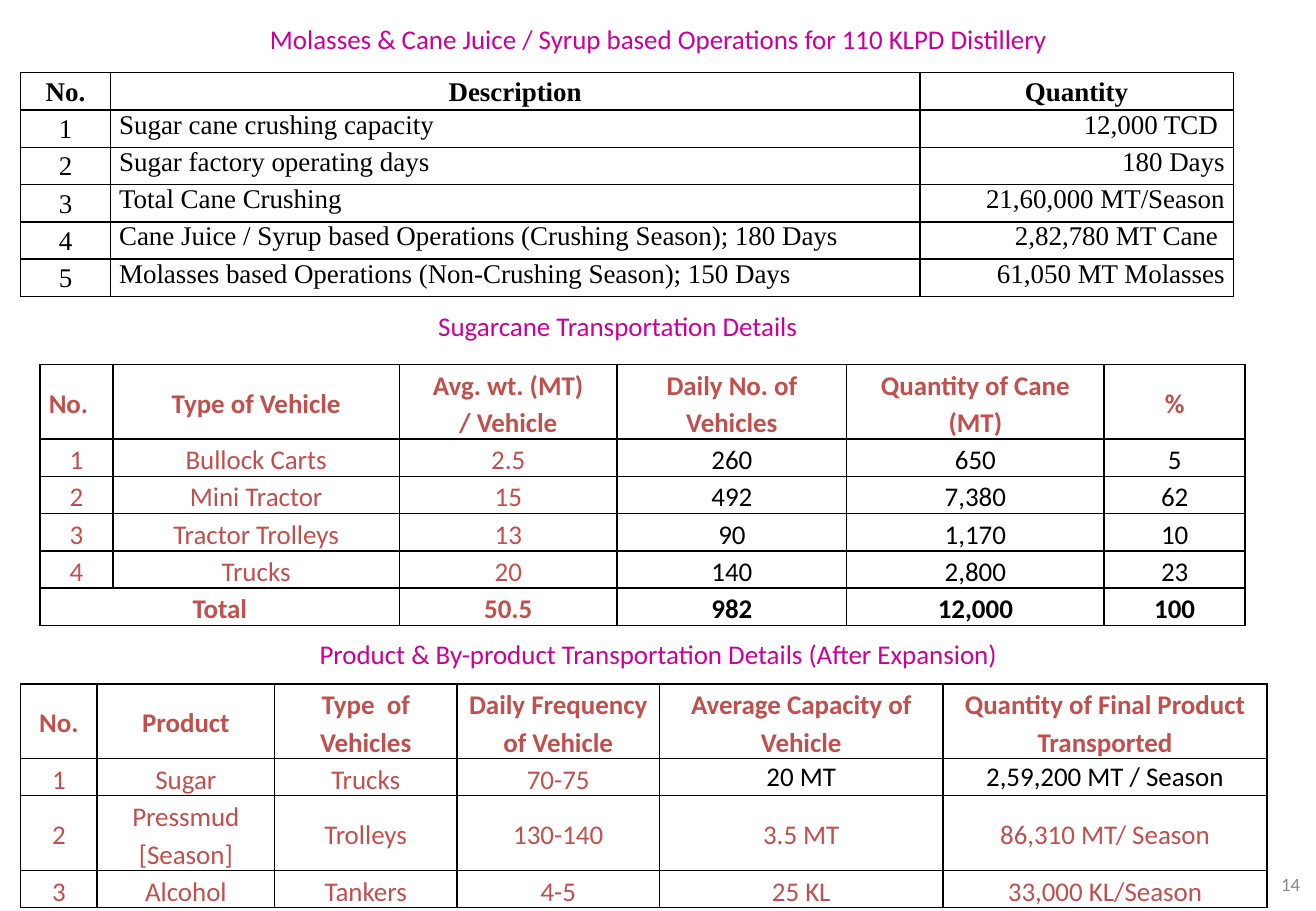
"""Build a slide of three distillery operation and transport tables."""
from dataclasses import dataclass
from itertools import product

from lxml.etree import SubElement
from pptx import Presentation
from pptx.dml.color import RGBColor
from pptx.enum.text import MSO_ANCHOR as Anchor, PP_ALIGN as Align
from pptx.oxml import parse_xml
from pptx.oxml.ns import nsdecls, qn
from pptx.util import Cm, Pt

COLORS = {"title": "CC0099", "accent": "C0504D", "ink": "000000", "number": "898989"}
ALIGNMENTS = {"l": Align.LEFT, "c": Align.CENTER, "r": Align.RIGHT}
LINE = 0.78
INSET = 0.18
Position = tuple[int, int]


@dataclass(frozen=True)
class Label:
    text: str
    left: float
    top: float
    width: float
    height: float
    size: float = 16
    color: str = "title"
    align: str = "c"


@dataclass(frozen=True)
class TableSpec:
    left: float
    top: float
    widths: list[float]
    line_counts: list[int]
    rows: list[list[str]]
    header_align: str
    body_align: str
    font: str = "Calibri"
    color: str = "accent"
    ink_cells: frozenset[Position] = frozenset()
    single_spaced: frozenset[Position] = frozenset()
    top_anchored: frozenset[Position] = frozenset()
    bold_rows: tuple[int, ...] = (0,)
    merged: tuple[Position, Position] | None = None


def block(rows: range, columns: range) -> frozenset[Position]:
    return frozenset(product(rows, columns))


LABELS = [
    Label("Molasses & Cane Juice / Syrup based Operations for 110 KLPD Distillery",
          5.28, 0.33, 16.97, 0.94),
    Label("Sugarcane Transportation Details", 8.89, 6.35, 8.05, 0.94),
    Label("Product & By-product Transportation Details (After Expansion)",
          6.4, 13.23, 14.73, 0.86),
    Label("14", 26.4, 17.98, 0.96, 1.02, 11.1, "number", "r"),
]

OPERATIONS = TableSpec(
    0.43, 1.52, [1.88, 16.92, 6.55], [1] * 6,
    [
        ["No.", "Description", "Quantity"],
        ["1", "Sugar cane crushing capacity", "12,000 TCD "],
        ["2", "Sugar factory operating days", "180 Days"],
        ["3", "Total Cane Crushing", "21,60,000 MT/Season"],
        ["4", "Cane Juice / Syrup based Operations (Crushing Season); 180 Days",
         "2,82,780 MT Cane "],
        ["5", "Molasses based Operations (Non-Crushing Season); 150 Days",
         "61,050 MT Molasses"],
    ],
    "ccc", "clr", font="Times New Roman", color="ink",
    single_spaced=block(range(1, 6), range(1, 3)),
    top_anchored=block(range(6), range(3)),
)

CANE_TRANSPORT = TableSpec(
    0.84, 7.62, [1.52, 5.99, 4.55, 4.8, 5.38, 2.95], [2, 1, 1, 1, 1, 1],
    [
        ["No.", "Type of Vehicle", "Avg. wt. (MT)\n/ Vehicle", "Daily No. of Vehicles",
         "Quantity of Cane (MT)", "%"],
        ["1", "Bullock Carts", "2.5", "260", "650", "5"],
        ["2", "Mini Tractor", "15", "492", "7,380", "62"],
        ["3", "Tractor Trolleys", "13", "90", "1,170", "10"],
        ["4", "Trucks", "20", "140", "2,800", "23"],
        ["Total", "", "50.5", "982", "12,000", "100"],
    ],
    "lccccc", "cccccc",
    ink_cells=block(range(1, 6), range(3, 6)),
    top_anchored=block(range(1, 5), range(3)),
    bold_rows=(0, 5), merged=((5, 0), (5, 1)),
)

PRODUCT_TRANSPORT = TableSpec(
    0.43, 14.3, [1.6, 3.71, 3.81, 4.24, 5.92, 6.78], [2, 1, 2, 1],
    [
        ["No.", "Product", "Type  of Vehicles", "Daily Frequency of Vehicle",
         "Average Capacity of Vehicle", "Quantity of Final Product\nTransported"],
        ["1", "Sugar", "Trucks", "70-75", "20 MT", "2,59,200 MT / Season"],
        ["2", "Pressmud [Season]", "Trolleys", "130-140", "3.5 MT", "86,310 MT/ Season"],
        ["3", "Alcohol", "Tankers", "4-5", "25 KL", "33,000 KL/Season"],
    ],
    "cccccc", "cccccc",
    ink_cells=block(range(1, 2), range(4, 6)),
    single_spaced=block(range(1, 2), range(4, 6)),
)


def format_text(text_frame, align: str, font: str, size: float, color: str,
                bold: bool = False, spacing: float = 1.0) -> None:
    for paragraph in text_frame.paragraphs:
        paragraph.alignment = ALIGNMENTS[align]
        paragraph.line_spacing = spacing
        for run in paragraph.runs:
            run.font.name = font
            run.font.size = Pt(size)
            run.font.bold = bold
            run.font.color.rgb = RGBColor.from_string(COLORS[color])


def add_label(slide, label: Label) -> None:
    box = slide.shapes.add_textbox(
        Cm(label.left), Cm(label.top), Cm(label.width), Cm(label.height))
    text_frame = box.text_frame
    text_frame.word_wrap = True
    text_frame.vertical_anchor = Anchor.MIDDLE
    text_frame.margin_left = text_frame.margin_right = Cm(INSET)
    text_frame.margin_top = text_frame.margin_bottom = Cm(0.08)
    text_frame.text = label.text
    format_text(text_frame, label.align, "Calibri", label.size, label.color)


def add_borders(cell) -> None:
    properties = cell._tc.get_or_add_tcPr()
    for index, side in enumerate("LRTB"):
        border = parse_xml(f'<a:ln{side} {nsdecls("a")} w="12700"/>')
        fill = SubElement(border, qn("a:solidFill"))
        SubElement(fill, qn("a:srgbClr"), val=COLORS["ink"])
        properties.insert(index, border)


def add_table(slide, spec: TableSpec) -> None:
    heights = [LINE * count for count in spec.line_counts]
    table = slide.shapes.add_table(
        len(spec.rows), len(spec.widths), Cm(spec.left), Cm(spec.top),
        Cm(sum(spec.widths)), Cm(sum(heights))).table
    table.first_row = table.horz_banding = False
    for column, width in zip(table.columns, spec.widths):
        column.width = Cm(width)
    for row, height in zip(table.rows, heights):
        row.height = Cm(height)
    if spec.merged:
        first, last = spec.merged
        table.cell(*first).merge(table.cell(*last))
    for position in product(range(len(spec.rows)), range(len(spec.widths))):
        row, column = position
        cell = table.cell(row, column)
        cell.fill.background()
        cell.margin_left = cell.margin_right = Cm(INSET)
        cell.margin_top = cell.margin_bottom = Cm(0)
        cell.vertical_anchor = Anchor.TOP if position in spec.top_anchored else Anchor.MIDDLE
        add_borders(cell)
        cell.text_frame.text = spec.rows[row][column]
        format_text(
            cell.text_frame,
            (spec.body_align if row else spec.header_align)[column],
            spec.font, 16,
            "ink" if position in spec.ink_cells else spec.color,
            row in spec.bold_rows,
            1.0 if position in spec.single_spaced else 1.15)


def main() -> None:
    presentation = Presentation()
    presentation.slide_width = Cm(27.51)
    presentation.slide_height = Cm(19.05)
    slide = presentation.slides.add_slide(presentation.slide_layouts[6])
    for label in LABELS:
        add_label(slide, label)
    for spec in (OPERATIONS, CANE_TRANSPORT, PRODUCT_TRANSPORT):
        add_table(slide, spec)
    presentation.save("out.pptx")


if __name__ == "__main__":
    main()
